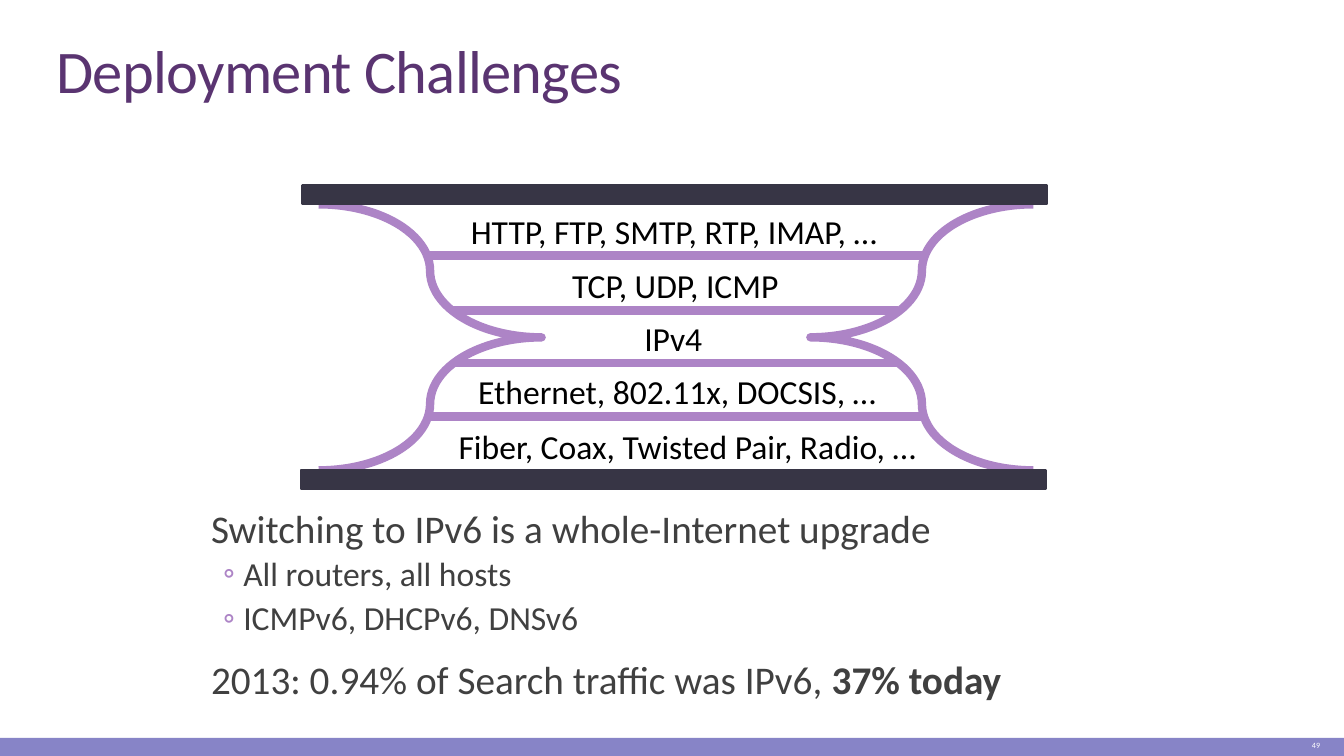
from dataclasses import dataclass
from lxml import etree
from pptx import Presentation
from pptx.dml.color import RGBColor
from pptx.enum.shapes import MSO_CONNECTOR, MSO_SHAPE
from pptx.enum.text import MSO_ANCHOR, MSO_AUTO_SIZE, PP_ALIGN
from pptx.oxml.ns import qn
from pptx.util import Inches, Pt

RECT, BRACE = MSO_SHAPE.RECTANGLE, MSO_SHAPE.LEFT_BRACE
LINE = MSO_CONNECTOR.STRAIGHT
LEFT, MID, RIGHT = PP_ALIGN.LEFT, PP_ALIGN.CENTER, PP_ALIGN.RIGHT
TOP, CENTER, BOTTOM = MSO_ANCHOR.TOP, MSO_ANCHOR.MIDDLE, MSO_ANCHOR.BOTTOM
GROW = MSO_AUTO_SIZE.SHAPE_TO_FIT_TEXT

FONT = "Calibri"
COLORS = {
    "footer": "8784C7", "title": "5A3471", "body": "404040",
    "curve": "AD84C6", "bar": "373545", "label": "000000", "number": "FFFFFF",
}


@dataclass
class Box:
    x: float
    y: float
    w: float
    h: float

    def place(self) -> list:
        return [Inches(v) for v in (self.x, self.y, self.w, self.h)]


@dataclass
class Layer:
    text: str
    left: float
    top: float
    width: float


@dataclass
class Rule:
    left: float
    right: float
    y: float


@dataclass
class Point:
    runs: list
    sub: bool = False


def tint(name: str) -> RGBColor:
    return RGBColor.from_string(COLORS[name])


def style(font, size: float, color: str, bold: bool = False) -> None:
    for key, value in {"name": FONT, "size": Pt(size), "bold": bold}.items():
        setattr(font, key, value)
    font.color.rgb = tint(color)


def add_bar(slide, box: Box, color: str, width: float = 0) -> None:
    bar = slide.shapes.add_shape(RECT, *box.place())
    bar.shadow.inherit = False
    bar.fill.solid()
    bar.fill.fore_color.rgb = tint(color)
    if width:
        bar.line.color.rgb = tint(color)
        bar.line.width = Pt(width)
    else:
        bar.line.fill.background()


def add_brace(slide, box: Box, turn: int) -> None:
    brace = slide.shapes.add_shape(BRACE, *box.place())
    brace.shadow.inherit = False
    brace.adjustments[0] = 0.76
    brace.rotation = turn
    brace.fill.background()
    brace.line.color.rgb = tint("curve")
    brace.line.width = Pt(4.5)


def add_rule(slide, rule: Rule) -> None:
    ends = [Inches(v) for v in (rule.left, rule.y, rule.right, rule.y)]
    line = slide.shapes.add_connector(LINE, *ends)
    line.line.color.rgb = tint("curve")
    line.line.width = Pt(4.5)
    etree.SubElement(line._element.spPr, qn("a:effectLst"))


def add_frame(slide, box: Box, anchor, wrap: bool = True):
    frame = slide.shapes.add_textbox(*box.place()).text_frame
    frame.word_wrap = wrap
    frame.vertical_anchor = anchor
    return frame


def add_text(slide, box: Box, text: str, size: float, color: str,
             align=LEFT, anchor=TOP, wrap: bool = True):
    frame = add_frame(slide, box, anchor, wrap)
    para = frame.paragraphs[0]
    para.alignment = align
    run = para.add_run()
    run.text = text
    style(run.font, size, color)
    return frame


def set_bullet(para) -> None:
    props = para._p.get_or_add_pPr()
    tone = etree.SubElement(props, qn("a:buClr"))
    etree.SubElement(tone, qn("a:srgbClr"), val=COLORS["curve"])
    etree.SubElement(props, qn("a:buFont"), typeface=FONT)
    etree.SubElement(props, qn("a:buChar"), char="◦")


def add_points(slide, box: Box, points: list) -> None:
    frame = add_frame(slide, box, TOP)
    frame.margin_left = frame.margin_right = 0
    for num, point in enumerate(points):
        para = frame.paragraphs[0] if num == 0 else frame.add_paragraph()
        para.level = int(point.sub)
        before, after = (1.5, 3) if point.sub else (9, 1.5)
        gaps = {"line_spacing": 0.9, "space_after": Pt(after),
                "space_before": Pt(before if num else 0)}
        for key, value in gaps.items():
            setattr(para, key, value)
        props = para._p.get_or_add_pPr()
        props.set("marL", str(Inches(0.32 if point.sub else 0.08)))
        props.set("indent", str(Inches(-0.15 if point.sub else 0)))
        if point.sub:
            set_bullet(para)
        for text, bold in point.runs:
            run = para.add_run()
            run.text = text
            style(run.font, 18 if point.sub else 21, "body", bold)


LAYERS = [
    Layer("HTTP, FTP, SMTP, RTP, IMAP, …", 3.39, 1.52, 3.25),
    Layer("TCP, UDP, ICMP", 4.15, 1.92, 1.75),
    Layer("IPv4", 4.69, 2.32, 0.64),
    Layer("Ethernet, 802.11x, DOCSIS, …", 3.44, 2.71, 3.2),
    Layer("Fiber, Coax, Twisted Pair, Radio, …", 3.29, 3.12, 3.65),
]
RULES = [Rule(3.18, 6.87, 1.9), Rule(3.37, 6.68, 2.31),
         Rule(3.37, 6.68, 2.7), Rule(3.2, 6.85, 3.1)]
POINTS = [
    Point([("Switching to IPv6 is a whole-Internet upgrade", False)]),
    Point([("All routers, all hosts", False)], sub=True),
    Point([("ICMPv6, DHCPv6, DNSv6", False)], sub=True),
    Point([("2013: 0.94% of Search traffic was IPv6, ", False),
           ("37% today", True)]),
]


def main() -> None:
    # Widescreen page, 16 to 9
    deck = Presentation()
    deck.slide_width = Inches(10)
    deck.slide_height = Inches(10 * 9 / 16)
    slide = deck.slides.add_slide(deck.slide_layouts[6])

    # Footer band, title and page number
    add_bar(slide, Box(0, 5.49, 10, 0.14), "footer")
    title = add_text(slide, Box(0.32, 0.24, 9.48, 0.6), "Deployment Challenges",
                     32.4, "title", anchor=BOTTOM).paragraphs[0]
    title.line_spacing = 0.85
    title.runs[0]._r.get_or_add_rPr().set("spc", "-38")
    add_text(slide, Box(8.84, 5.46, 1.08, 0.17), "49", 4.3, "number",
             RIGHT, CENTER)

    # Bullet points
    add_points(slide, Box(1.49, 3.74, 7.11, 1.72), POINTS)

    # Hourglass outline
    for left, turn in ((6.03, 0), (2.37, 180)):
        add_brace(slide, Box(left, 1.52, 1.66, 1.98), turn)
    for left, top in ((2.24, 3.5), (2.25, 1.38)):
        add_bar(slide, Box(left, top, 5.54, 0.14), "bar", 1.25)

    # Protocol layers
    for rule in RULES:
        add_rule(slide, rule)
    for layer in LAYERS:
        box = Box(layer.left, layer.top, layer.width, 0.4)
        frame = add_text(slide, box, layer.text, 18, "label", MID, wrap=False)
        frame.auto_size = GROW

    deck.save("out.pptx")


if __name__ == "__main__":
    main()
